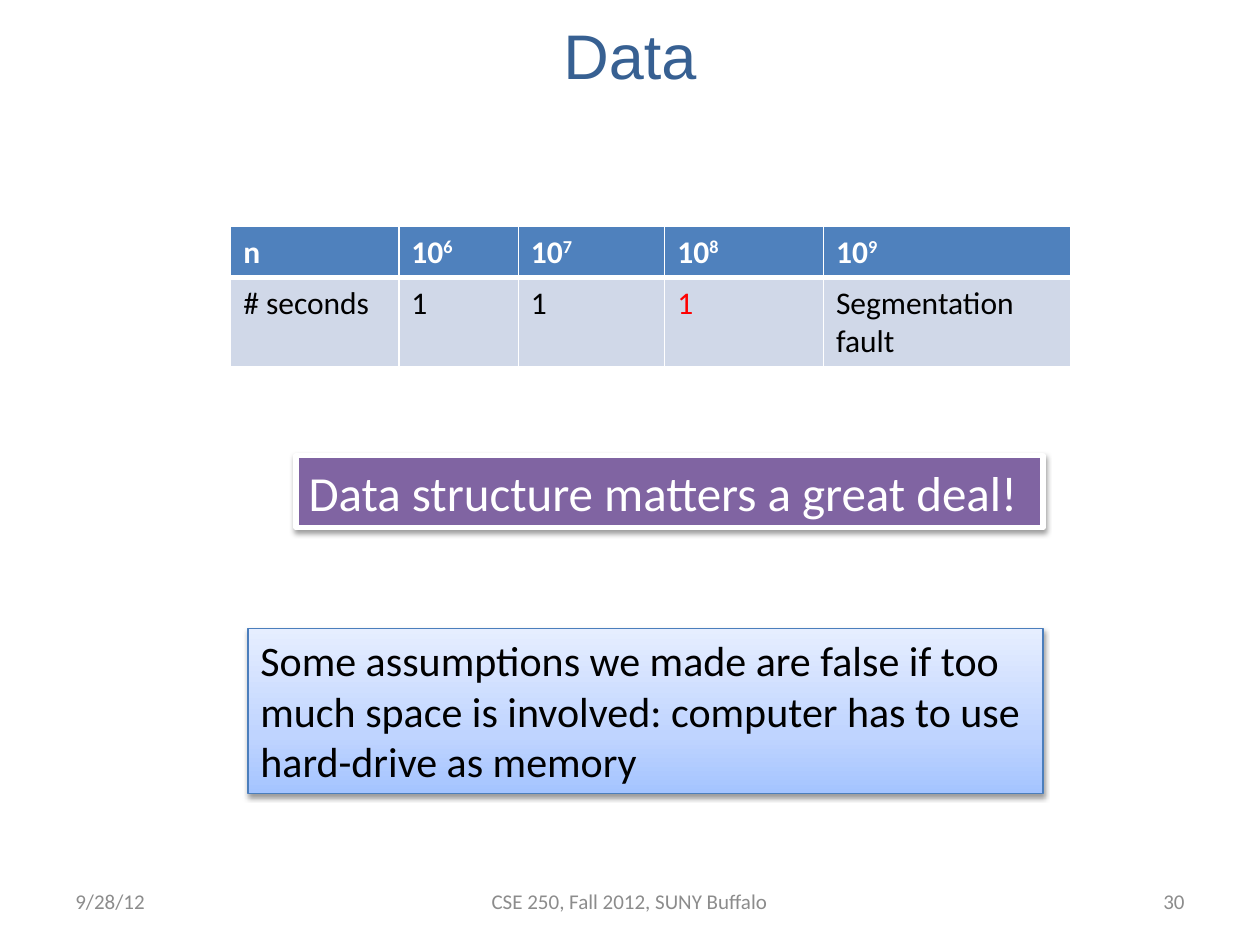
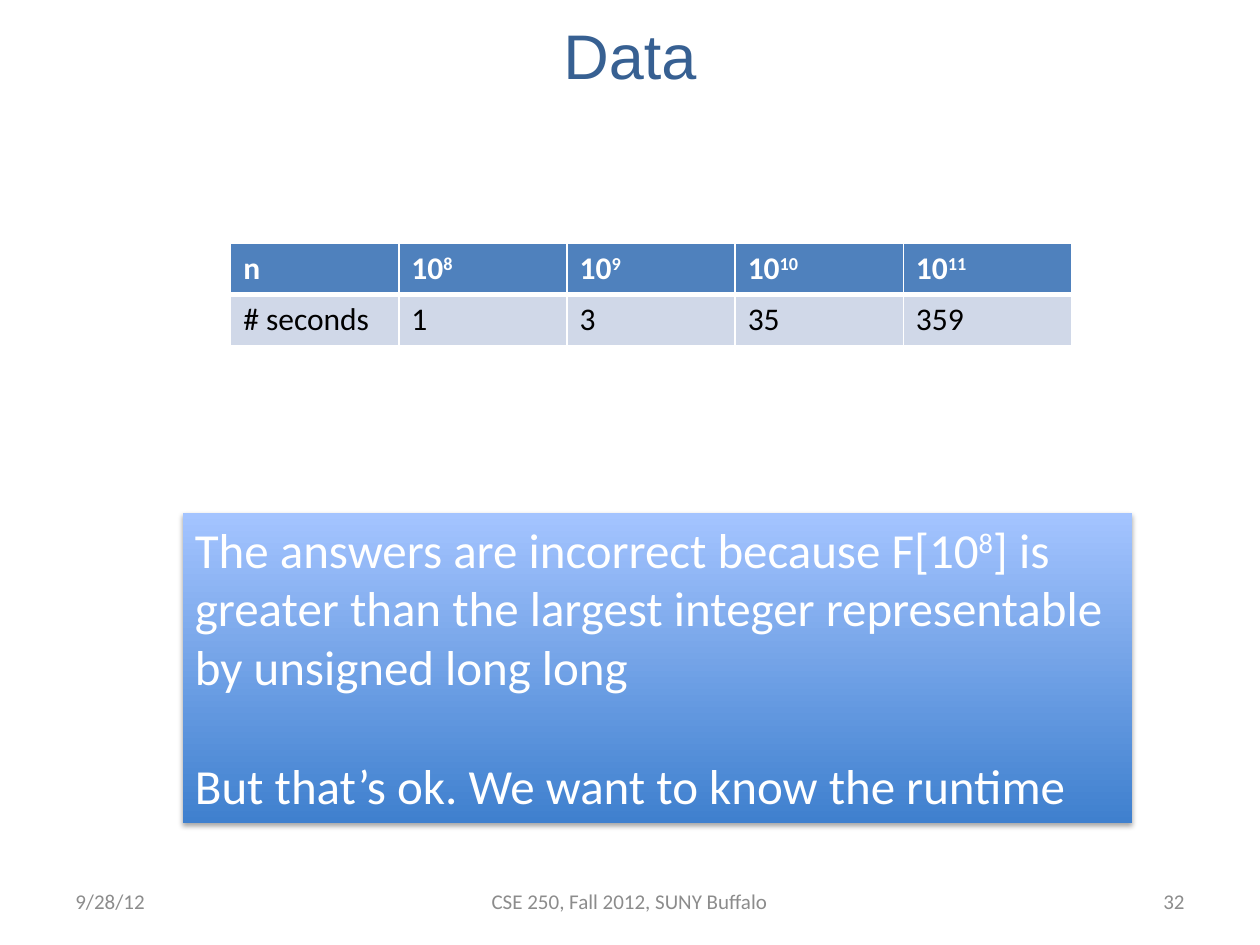
from lxml import etree
from pptx import Presentation
from pptx.dml.color import RGBColor
from pptx.enum.shapes import MSO_SHAPE
from pptx.enum.text import MSO_ANCHOR as ANCHOR, PP_ALIGN as ALIGN
from pptx.oxml.ns import qn
from pptx.util import Cm, Pt

WHITE = RGBColor(0xFF, 0xFF, 0xFF)
BLACK = RGBColor(0x00, 0x00, 0x00)
RED = RGBColor(0xFF, 0x00, 0x00)
TITLE_BLUE = RGBColor(0x37, 0x60, 0x92)
FOOTER_GRAY = RGBColor(0x8C, 0x8C, 0x8C)
HEADER_BLUE = RGBColor(0x4F, 0x81, 0xBD)
ROW_GRAY = RGBColor(0xD0, 0xD8, 0xE8)
PURPLE = RGBColor(0x80, 0x64, 0xA2)
EDGE_BLUE = RGBColor(0x4B, 0x7E, 0xBC)
DEEP_BLUE = RGBColor(0x3F, 0x80, 0xCE)
SOFT_BLUE = RGBColor(0xA4, 0xC4, 0xFF)
PALE_BLUE = RGBColor(0xBF, 0xD4, 0xFF)
MIST_BLUE = RGBColor(0xE6, 0xEE, 0xFF)

BODY_FONT = "Calibri"
DATE = "9/28/12"
COURSE = "CSE 250, Fall 2012, SUNY Buffalo"
TABLE_LEFT = 4.65
ROW_HEIGHT = 1.03


def write(p, text, size, color, font=BODY_FONT, bold=False, align=ALIGN.LEFT):
    """Fill a paragraph; parts between carets become superscripts."""
    p.alignment = align
    for i, part in enumerate(text.split("^")):
        if part:
            r = p.add_run()
            r.text = part
            r.font.size, r.font.name, r.font.bold = Pt(size), font, bold
            r.font.color.rgb = color
            if i % 2:
                r.font._element.set("baseline", "30000")


def add_label(slide, box, text, size, color, font=BODY_FONT, align=ALIGN.LEFT):
    """Add a one-line text box centred vertically."""
    tf = slide.shapes.add_textbox(*map(Cm, box)).text_frame
    tf.word_wrap = True
    tf.vertical_anchor = ANCHOR.MIDDLE
    write(tf.paragraphs[0], text, size, color, font, align=align)


def add_slide(prs, title, number):
    """Add a blank slide with the shared title and footers."""
    slide = prs.slides.add_slide(prs.slide_layouts[6])
    add_label(slide, (0, 0.18, 25.4, 1.85), title, 36, TITLE_BLUE, "Arial", ALIGN.CENTER)
    for left, width, text, align in (
        (1.27, 5.92, DATE, ALIGN.LEFT),
        (7.42, 10.54, COURSE, ALIGN.CENTER),
        (18.21, 5.92, str(number), ALIGN.RIGHT),
    ):
        add_label(slide, (left, 17.65, width, 1.02), text, 12, FOOTER_GRAY, align=align)
    return slide


def set_borders(cell, top, bottom):
    """Give a cell white borders with the top and bottom widths in points."""
    tc_pr = cell._tc.get_or_add_tcPr()
    for side, width in (("L", 1), ("R", 1), ("T", top), ("B", bottom)):
        ln = etree.SubElement(tc_pr, qn(f"a:ln{side}"), w=str(Pt(width)))
        fill = etree.SubElement(ln, qn("a:solidFill"))
        etree.SubElement(fill, qn("a:srgbClr"), val=str(WHITE))


def add_timing_table(slide, top, widths, sizes, seconds, body_height=ROW_HEIGHT, alert=None):
    """Add the table of run times, with the alert column in red."""
    heights = (ROW_HEIGHT, body_height)
    box = (TABLE_LEFT, top, sum(widths), sum(heights))
    table = slide.shapes.add_table(2, len(widths), *map(Cm, box)).table
    for row, height in zip(table.rows, heights):
        row.height = Cm(height)
    for col, width in enumerate(widths):
        table.columns[col].width = Cm(width)
        header, body = table.cell(0, col), table.cell(1, col)
        set_borders(header, 1, 3)
        set_borders(body, 3, 1)
        for cell, color in ((header, HEADER_BLUE), (body, ROW_GRAY)):
            cell.fill.solid()
            cell.fill.fore_color.rgb = color
        size = f"10^{sizes[col - 1]}^" if col else "n"
        value = seconds[col - 1] if col else "# seconds"
        write(header.text_frame.paragraphs[0], size, 18, WHITE, bold=True)
        write(body.text_frame.paragraphs[0], value, 18, RED if col == alert else BLACK)


def set_gradient(sp, stops):
    """Fill a shape with a gradient running from bottom to top."""
    sp.fill.gradient()
    sp.fill.gradient_angle = 90
    gs_lst = sp._element.spPr.find(".//" + qn("a:gsLst"))
    for gs in list(gs_lst):
        gs_lst.remove(gs)
    for pos, color in stops:
        gs = etree.SubElement(gs_lst, qn("a:gs"), pos=str(pos * 1000))
        etree.SubElement(gs, qn("a:srgbClr"), val=str(color))


def set_shadow(sp, alpha, distance):
    """Give a shape a soft black shadow below it."""
    sp.shadow.inherit = False
    effects = sp._element.spPr.find(qn("a:effectLst"))
    shadow = etree.SubElement(
        effects, qn("a:outerShdw"), blurRad=str(Pt(3.1)), dist=str(Pt(distance)),
        dir="5400000", rotWithShape="0")
    clr = etree.SubElement(shadow, qn("a:srgbClr"), val=str(BLACK))
    etree.SubElement(clr, qn("a:alpha"), val=str(alpha * 1000))


def add_callout(slide, box, lines, size, color, fill, line=None, shadow=(38, 1.6)):
    """Add a shadowed box; fill is a colour or a list of gradient stops."""
    sp = slide.shapes.add_shape(MSO_SHAPE.RECTANGLE, *map(Cm, box))
    if isinstance(fill, RGBColor):
        sp.fill.solid()
        sp.fill.fore_color.rgb = fill
    else:
        set_gradient(sp, fill)
    if line:
        sp.line.color.rgb, sp.line.width = line[0], Pt(line[1])
    else:
        sp.line.fill.background()
    set_shadow(sp, *shadow)
    tf = sp.text_frame
    tf.word_wrap = True
    tf.vertical_anchor = ANCHOR.TOP
    for i, text in enumerate(lines):
        p = tf.add_paragraph() if i else tf.paragraphs[0]
        write(p, text, size, color)
    return tf


def add_memory_slide(prs):
    """Build the slide on run times limited by memory."""
    slide = add_slide(prs, "Data", 30)
    add_timing_table(
        slide, 4.57, (3.39, 2.41, 2.95, 3.2, 4.98), (6, 7, 8, 9),
        ("1", "1", "1", "Segmentation fault"), body_height=1.79, alert=3)
    add_callout(
        slide, (5.97, 9.19, 15.06, 1.45), ["Data structure matters a great deal!"],
        28, WHITE, PURPLE, (WHITE, 3))
    add_callout(
        slide, (5, 12.67, 16.03, 3.33),
        ["Some assumptions we made are false if too",
         "much space is involved: computer has to use",
         "hard-drive as memory"],
        24, BLACK, [(0, SOFT_BLUE), (35, PALE_BLUE), (100, MIST_BLUE)], (EDGE_BLUE, 0.75))


def add_overflow_slide(prs):
    """Build the slide on run times with overflowing answers."""
    slide = add_slide(prs, "Data", 32)
    add_timing_table(
        slide, 4.91, (3.39,) * 5, (8, 9, 10, 11), ("1", "3", "35", "359"))
    tf = add_callout(
        slide, (3.68, 10.34, 19.15, 6.25),
        ["The answers are incorrect because F[10^8^] is",
         "greater than the largest integer representable",
         "by unsigned long long",
         "But that’s ok. We want to know the runtime"],
        28, WHITE, [(0, DEEP_BLUE), (100, SOFT_BLUE)], shadow=(35, 1.8))
    tf.paragraphs[-1].space_before = Pt(34)


def main():
    """Build and save the presentation."""
    prs = Presentation()
    prs.slide_width, prs.slide_height = Cm(25.4), Cm(19.05)
    add_memory_slide(prs)
    add_overflow_slide(prs)
    prs.save("out.pptx")


if __name__ == "__main__":
    main()
